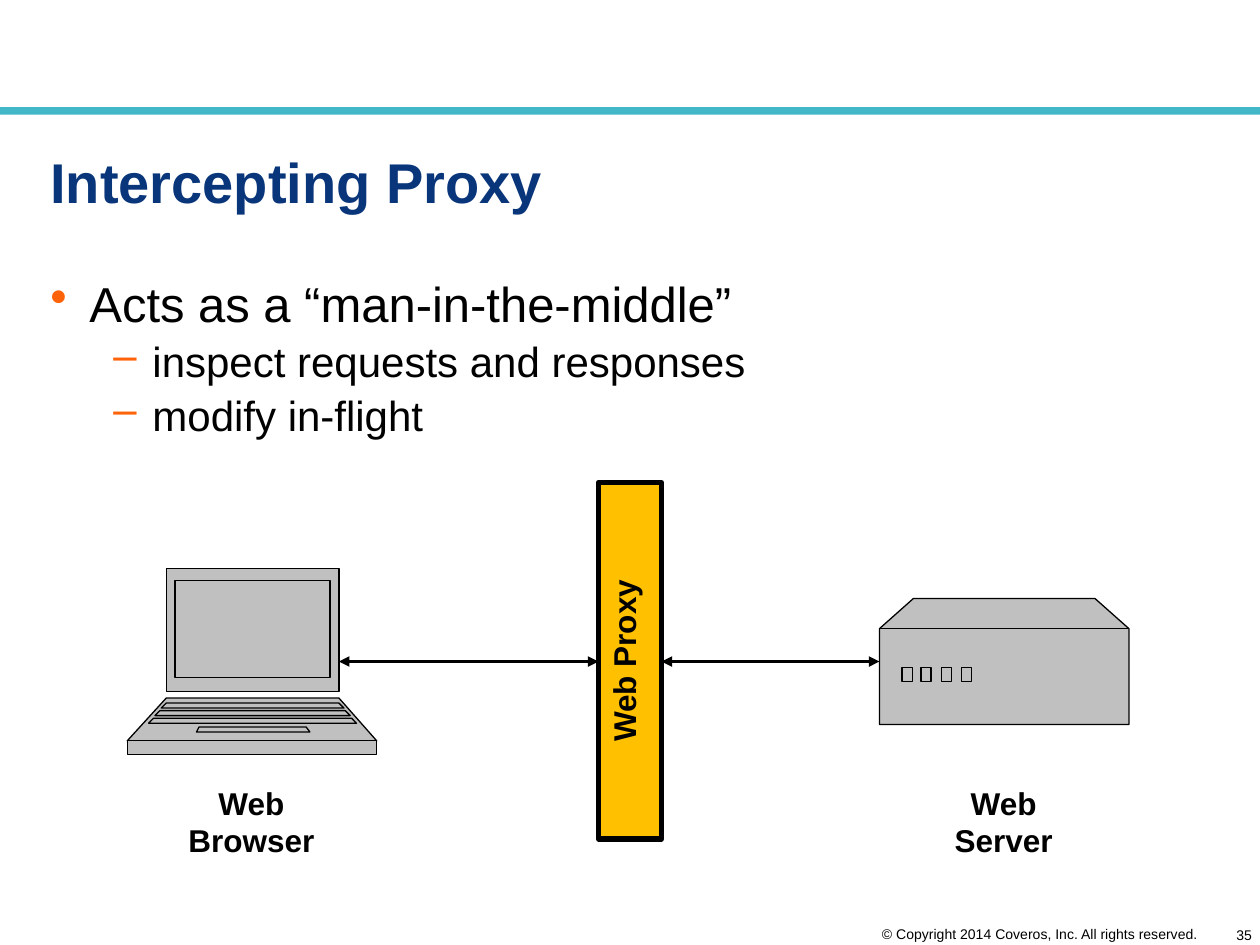
import copy

import pptx
import pptx.dml.color
import pptx.enum.shapes
import pptx.enum.text
import pptx.oxml
import pptx.oxml.ns
import pptx.util

PX = 9144  # EMU per px, 100 px to the inch
ALIGN = pptx.enum.text.PP_ALIGN
ANCHOR = pptx.enum.text.MSO_ANCHOR

THEME = {
    "font": "Arial",
    "ink": "000000",
    "title": "09357A",
    "bullet": "FF6309",
    "rule": "41B7C8",
    "device": "C0C0C0",
    "proxy": "FFC000",
    "title_size": 32,
    "level_sizes": (28, 24),
    "label_size": 18,
    "footer_size": 8,
}


def color(name):
    return pptx.dml.color.RGBColor.from_string(THEME[name])


def emu(*lengths):
    return [length * PX for length in lengths]


def set_attributes(target, values):
    for name, value in values.items():
        setattr(target, name, value)


def add_element(parent, tag, **attributes):
    element = pptx.oxml.ns.qn(tag)
    child = parent.makeelement(element, attributes)
    parent.append(child)
    return child


def style_shape(shape, fill, line_width=0):
    shape.shadow.inherit = False
    shape.fill.solid()
    shape.fill.fore_color.rgb = color(fill)
    if line_width:
        shape.line.color.rgb = color("ink")
        shape.line.width = pptx.util.Pt(line_width)
    else:
        shape.line.fill.background()


def write_run(paragraph, text, size, ink="ink", bold=False):
    run = paragraph.add_run()
    run.text = text
    set_attributes(run.font, {
        "name": THEME["font"], "size": pptx.util.Pt(size), "bold": bold})
    run.font.color.rgb = color(ink)


def add_text_box(slide, box, wrap=True, anchor=ANCHOR.TOP, inset=(0, 0)):
    text_frame = slide.shapes.add_textbox(*emu(*box)).text_frame
    across, down = emu(*inset)
    set_attributes(text_frame, {
        "word_wrap": wrap, "vertical_anchor": anchor,
        "margin_left": across, "margin_right": across,
        "margin_top": down, "margin_bottom": down})
    return text_frame


def draw_header(slide, box):
    rule = slide.shapes.add_shape(
        pptx.enum.shapes.MSO_SHAPE.RECTANGLE, *emu(*box))
    style_shape(rule, "rule")


def draw_title(slide, box, text):
    paragraph = add_text_box(slide, box).paragraphs[0]
    write_run(paragraph, text, THEME["title_size"], "title", True)


def draw_bullets(slide, box, items):
    """Write (level, text) items with coloured bullet marks."""
    text_frame = add_text_box(slide, box)
    for index, (level, text) in enumerate(items):
        paragraph = text_frame.add_paragraph() if index else text_frame.paragraphs[0]
        set_attributes(paragraph, {"level": level, "line_spacing": 0.85})
        if index:
            paragraph.space_before = pptx.util.Pt(6.2)
        properties = paragraph._p.get_or_add_pPr()
        properties.set("marL", str((31 + 50 * level) * PX))
        properties.set("indent", str(-31 * PX))
        bullet_color = add_element(properties, "a:buClr")
        add_element(bullet_color, "a:srgbClr", val=THEME["bullet"])
        add_element(properties, "a:buChar", char="•–"[level])
        write_run(paragraph, text, THEME["level_sizes"][level])


def draw_footer(slide, box, copyright_line, number):
    left, top, width, height = box
    notice = add_text_box(
        slide, (left, top, 257, height), wrap=False, anchor=ANCHOR.MIDDLE)
    page = add_text_box(slide, (left + width - 25, top, 25, height))
    page.paragraphs[0].alignment = ALIGN.CENTER
    for text_frame, text in ((notice, copyright_line), (page, number)):
        write_run(text_frame.paragraphs[0], text, THEME["footer_size"])


def trapezoid(top_left, top_right, bottom_left, bottom_right, top, bottom):
    return [(top_left, top), (top_right, top),
            (bottom_right, bottom), (bottom_left, bottom)]


def rectangle(left, top, right, bottom):
    return trapezoid(left, right, left, right, top, bottom)


def draw_outlines(slide, origin, outlines):
    """Draw outlines as one freeform whose parts are each filled in turn."""
    builder = slide.shapes.build_freeform(*outlines[0][0], scale=PX)
    for outline in outlines:
        if outline is not outlines[0]:
            builder.move_to(*outline[0])
        builder.add_line_segments(outline[1:], close=len(outline) > 2)
    shape = builder.convert_to_shape(*emu(*origin))
    style_shape(shape, "device", 0.75)

    joined = shape._element.find(".//" + pptx.oxml.ns.qn("a:path"))
    path_list = joined.getparent()
    path_list.remove(joined)
    for step in list(joined):
        if step.tag == pptx.oxml.ns.qn("a:moveTo"):
            part = copy.deepcopy(joined)
            for child in list(part):
                part.remove(child)
            path_list.append(part)
        part.append(step)


def draw_laptop(slide, origin):
    key_rows = [
        trapezoid(31 - 5 * row, 168 + 5 * row, 27 - 5 * row, 172 + 5 * row,
                  107 + 6 * row, 111 + 6 * row)
        for row in range(3)]
    draw_outlines(slide, origin, [
        rectangle(31, 0, 168, 98),
        trapezoid(31, 168, 0, 198, 103, 137),
        rectangle(0, 137, 198, 148),
        rectangle(38, 10, 161, 87),
        *key_rows,
        trapezoid(57, 142, 55, 145, 126, 130)])


def draw_server(slide, origin):
    lights = [rectangle(left, 55, left + 8, 66)
              for left in (18 + 47 * index // 3 for index in range(4))]
    draw_outlines(slide, origin, [
        [(0, 24), (27, 0), (171, 0), (198, 24), (198, 100), (0, 100)],
        [(0, 24), (198, 24)],
        *lights])


def draw_proxy(slide, box, text):
    proxy = slide.shapes.add_shape(
        pptx.enum.shapes.MSO_SHAPE.RECTANGLE, *emu(*box))
    style_shape(proxy, "proxy", 3)
    text_frame = proxy.text_frame
    set_attributes(text_frame, {"word_wrap": True, "vertical_anchor": ANCHOR.TOP})
    text_frame._txBody.bodyPr.set("vert", "vert270")
    text_frame.paragraphs[0].alignment = ALIGN.CENTER
    write_run(text_frame.paragraphs[0], text, THEME["label_size"], bold=True)


def draw_link(slide, start, end, height):
    link = slide.shapes.add_connector(
        pptx.enum.shapes.MSO_CONNECTOR.STRAIGHT, *emu(start, height, end, height))
    link.line.color.rgb = color("ink")
    link.line.width = pptx.util.Pt(2)
    line = link.line._get_or_add_ln()
    for tag in ("a:headEnd", "a:tailEnd"):
        add_element(line, tag, type="triangle")
    add_element(link._element.spPr, "a:effectLst")


def draw_label(slide, box, text):
    paragraph = add_text_box(slide, box, inset=(10, 5)).paragraphs[0]
    paragraph.alignment = ALIGN.CENTER
    write_run(paragraph, text, THEME["label_size"], bold=True)


def draw_diagram(slide, box):
    left, top, width, height = box
    proxy_left, proxy_width, device_width = left + 374, 50, 198
    server_left = left + width - device_width
    draw_laptop(slide, (left, top + 68))
    draw_server(slide, (server_left, top + 92))
    draw_proxy(slide, (proxy_left, top, proxy_width, 283), "Web Proxy")
    draw_link(slide, left + 168, proxy_left, top + 142)
    draw_link(slide, proxy_left + proxy_width, server_left, top + 142)
    for device_left, text in ((left, "Web Browser"), (server_left, "Web Server")):
        label_left = device_left + (device_width - 125) // 2
        draw_label(slide, (label_left, top + height - 71, 125, 71), text)


def main():
    presentation = pptx.Presentation()
    set_attributes(presentation, {"slide_width": 1000 * PX, "slide_height": 750 * PX})
    slide = presentation.slides.add_slide(presentation.slide_layouts[6])
    draw_header(slide, (0, 85, 1000, 6))
    draw_footer(slide, (700, 735, 300, 13),
                "© Copyright 2014 Coveros, Inc. All rights reserved.", "35")
    draw_title(slide, (40, 117, 919, 56), "Intercepting Proxy")
    draw_bullets(slide, (40, 224, 919, 501), [
        (0, "Acts as a “man-in-the-middle”"),
        (1, "inspect requests and responses"),
        (1, "modify in-flight")])
    draw_diagram(slide, (101, 383, 795, 305))
    presentation.save("out.pptx")


if __name__ == "__main__":
    main()
